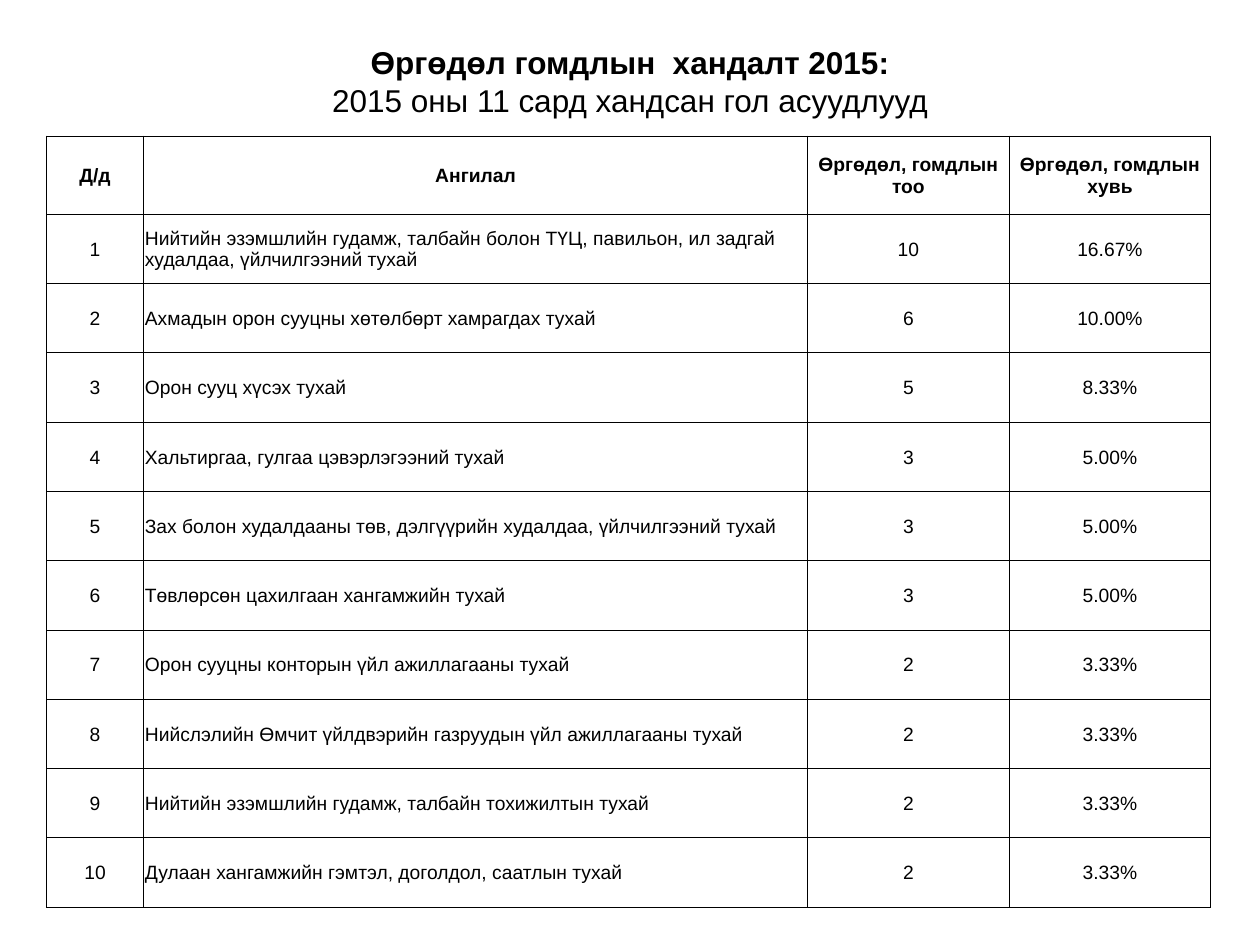
from dataclasses import dataclass

from lxml import etree
from pptx import Presentation
from pptx.dml.color import RGBColor
from pptx.enum.text import MSO_ANCHOR, MSO_AUTO_SIZE, PP_ALIGN
from pptx.oxml.ns import qn
from pptx.util import Inches, Pt

CENTER, LEFT = PP_ALIGN.CENTER, PP_ALIGN.LEFT
MIDDLE = MSO_ANCHOR.MIDDLE
NO_AUTOFIT = MSO_AUTO_SIZE.NONE
TITLE_ONLY = 5


@dataclass(frozen=True)
class Theme:
    font: str = "Arial"
    ink: str = "000000"
    paper: str = "FFFFFF"
    title_size: float = 18
    table_size: float = 11
    border_width: float = 0.5


THEME = Theme()

TITLE_LINES = ["Өргөдөл гомдлын  хандалт 2015:", "2015 оны 11 сард хандсан гол асуудлууд"]
HEADINGS = ["Д/д", "Ангилал", "Өргөдөл, гомдлын тоо", "Өргөдөл, гомдлын хувь"]
TOTAL_COMPLAINTS = 60
COMPLAINTS = [
    ("Нийтийн эзэмшлийн гудамж, талбайн болон ТҮЦ, павильон, ил задгай худалдаа, үйлчилгээний тухай", 10),
    ("Ахмадын орон сууцны хөтөлбөрт хамрагдах тухай", 6),
    ("Орон сууц хүсэх тухай", 5),
    ("Хальтиргаа, гулгаа цэвэрлэгээний тухай", 3),
    ("Зах болон худалдааны төв, дэлгүүрийн худалдаа, үйлчилгээний тухай", 3),
    ("Төвлөрсөн цахилгаан хангамжийн тухай", 3),
    ("Орон сууцны конторын үйл ажиллагааны тухай", 2),
    ("Нийслэлийн Өмчит үйлдвэрийн газруудын үйл ажиллагааны тухай", 2),
    ("Нийтийн эзэмшлийн гудамж, талбайн тохижилтын тухай", 2),
    ("Дулаан хангамжийн гэмтэл, доголдол, саатлын тухай", 2),
]
COLUMN_WIDTHS = [0.77, 5.27, 1.6, 1.6]
HEADER_HEIGHT, ROW_HEIGHT = 0.62, 0.55
CATEGORY_COLUMN = 1


def style_paragraph(para, size, bold, align):
    para.alignment = align
    para.font.name = THEME.font
    para.font.size = Pt(size)
    para.font.bold = bold
    para.font.color.rgb = RGBColor.from_string(THEME.ink)


def add_title(page):
    title = page.shapes.title
    title.left, title.top = Inches(0.69), Inches(0.21)
    title.width, title.height = Inches(8.62), Inches(0.87)
    frame = title.text_frame
    frame.auto_size = NO_AUTOFIT
    frame.vertical_anchor = MIDDLE
    frame.text = "\n".join(TITLE_LINES)
    for index, para in enumerate(frame.paragraphs):
        style_paragraph(para, THEME.title_size, index == 0, CENTER)


def add_borders(cell):
    properties = cell._tc.get_or_add_tcPr()
    # Borders must come before the fill in the cell properties
    for position, side in enumerate(("lnL", "lnR", "lnT", "lnB")):
        line = etree.Element(qn(f"a:{side}"), w=str(Pt(THEME.border_width)))
        fill = etree.SubElement(line, qn("a:solidFill"))
        etree.SubElement(fill, qn("a:srgbClr"), val=THEME.ink)
        properties.insert(position, line)


def fill_cell(cell, text, bold, align):
    cell.text = text
    cell.vertical_anchor = MIDDLE
    cell.margin_left = cell.margin_right = cell.margin_top = Inches(0.01)
    cell.margin_bottom = 0
    cell.fill.solid()
    cell.fill.fore_color.rgb = RGBColor.from_string(THEME.paper)
    style_paragraph(cell.text_frame.paragraphs[0], THEME.table_size, bold, align)
    add_borders(cell)


def add_complaints_table(page):
    rows = [HEADINGS] + [
        [str(number), category, str(count), f"{count / TOTAL_COMPLAINTS:.2%}"]
        for number, (category, count) in enumerate(COMPLAINTS, 1)
    ]
    heights = [HEADER_HEIGHT] + [ROW_HEIGHT] * len(COMPLAINTS)
    table = page.shapes.add_table(
        len(rows), len(HEADINGS), Inches(0.37), Inches(1.08),
        Inches(sum(COLUMN_WIDTHS)), Inches(sum(heights)),
    ).table
    table.horz_banding = False
    for column, width in zip(table.columns, COLUMN_WIDTHS):
        column.width = Inches(width)
    for row, height in zip(table.rows, heights):
        row.height = Inches(height)

    for row_index, texts in enumerate(rows):
        is_header = row_index == 0
        for column_index, text in enumerate(texts):
            is_category = column_index == CATEGORY_COLUMN and not is_header
            fill_cell(table.cell(row_index, column_index), text, is_header,
                      LEFT if is_category else CENTER)


def main():
    deck = Presentation()
    deck.slide_width, deck.slide_height = Inches(10), Inches(7.5)
    page = deck.slides.add_slide(deck.slide_layouts[TITLE_ONLY])
    # Title and subtitle
    add_title(page)
    # Complaints by category
    add_complaints_table(page)
    deck.save("out.pptx")


if __name__ == "__main__":
    main()
